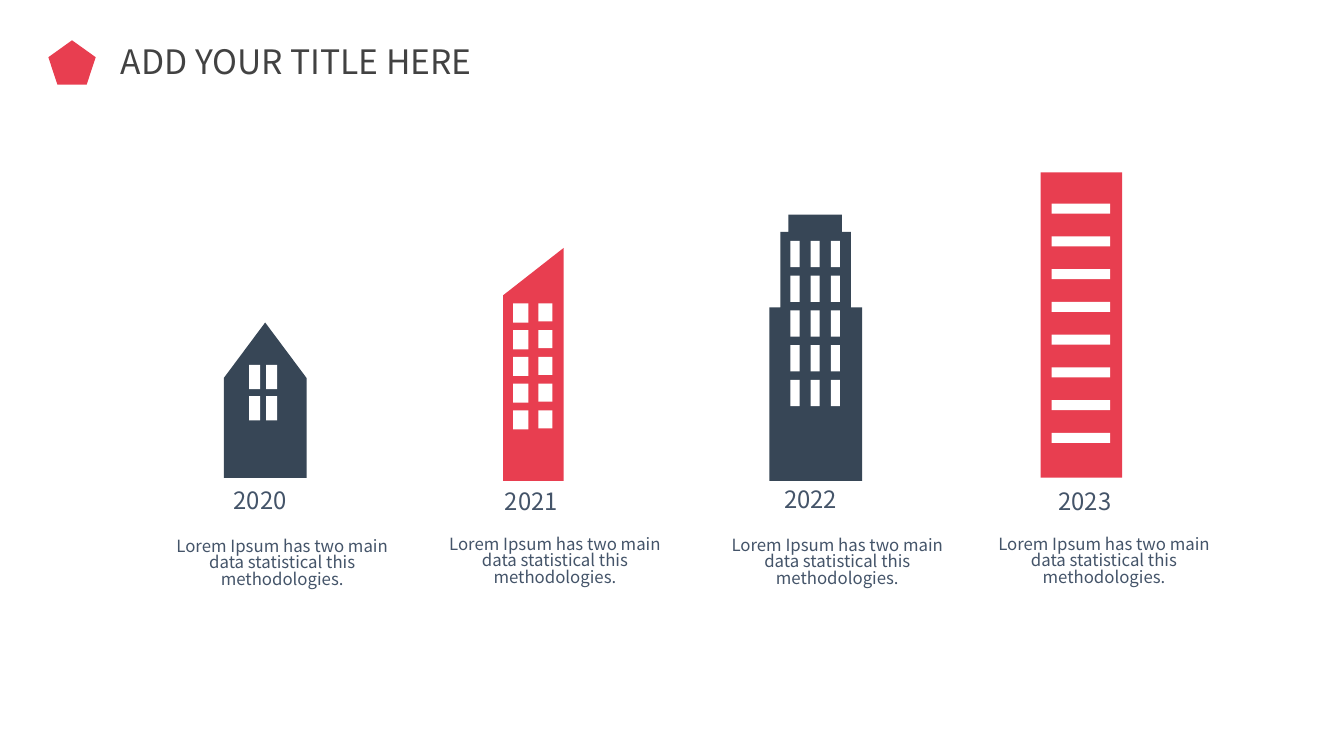
from pptx import Presentation
from pptx import util as u
from pptx.dml.color import RGBColor
from pptx.enum import shapes, text

HUES = {"red": "E83E50", "navy": "374656", "white": "FFFFFF",
        "title": "424242", "body": "445469"}
BLURB = "Lorem Ipsum has two main data statistical this methodologies."


class Page:
    font = "Noto Sans CJK JP"

    def __init__(self, slide):
        self.slide = slide

    def hue(self, name):
        return RGBColor.from_string(HUES[name])

    def paint(self, item, fill):
        item.shadow.inherit = False
        item.fill.solid()
        item.fill.fore_color.rgb = self.hue(fill)
        item.line.fill.background()

    def shape(self, box, fill, kind=shapes.MSO_SHAPE.RECTANGLE):
        item = self.slide.shapes.add_shape(kind, *map(u.Inches, box))
        self.paint(item, fill)

    def outline(self, points, fill):
        start, *rest = [(u.Inches(x), u.Inches(y)) for x, y in points]
        form = self.slide.shapes.build_freeform(*start)
        form.add_line_segments(rest, close=True)
        self.paint(form.convert_to_shape(), fill)

    def panes(self, lefts, top, step, rows, width, height):
        """Draw a grid of white windows."""
        for row in range(rows):
            for left in lefts:
                self.shape((left, top + row * step, width, height), "white")

    def label(self, box, words, size, hue="body", space=0.9, align=text.PP_ALIGN.LEFT):
        frame = self.slide.shapes.add_textbox(*map(u.Inches, box)).text_frame
        frame.word_wrap = True
        frame.auto_size = text.MSO_AUTO_SIZE.SHAPE_TO_FIT_TEXT
        para = frame.paragraphs[0]
        para.text = words
        para.alignment = align
        para.line_spacing = space
        para.font.name = self.font
        para.font.size = u.Pt(size)
        para.font.color.rgb = self.hue(hue)


def main():
    deck = Presentation()
    deck.slide_width, deck.slide_height = u.Inches(13.33), u.Inches(7.5)
    page = Page(deck.slides.add_slide(deck.slide_layouts[6]))

    page.shape((0.48, 0.4, 0.47, 0.44), "red", shapes.MSO_SHAPE.REGULAR_PENTAGON)
    page.label((1.1, 0.4, 4.95, 0.5), "ADD YOUR TITLE HERE", 24, "title")

    # House
    page.outline([(3.04, 4.74), (2.22, 4.74), (2.22, 3.75), (2.63, 3.2),
                  (3.04, 3.75)], "navy")
    page.panes([2.47, 2.64], 3.62, 0.31, 2, 0.11, 0.24)

    # Slanted block
    page.outline([(5.59, 2.46), (4.99, 2.93), (4.99, 4.77), (5.59, 4.77)], "red")
    page.panes([5.09], 3.01, 0.265, 5, 0.15, 0.19)
    page.panes([5.34], 3.01, 0.265, 5, 0.14, 0.18)

    # Stepped tower
    page.outline([(8.44, 3.05), (8.44, 2.3), (8.35, 2.3), (8.35, 2.13),
                  (7.82, 2.13), (7.82, 2.3), (7.74, 2.3), (7.74, 3.05),
                  (7.63, 3.05), (7.63, 4.77), (8.55, 4.77), (8.55, 3.05)], "navy")
    page.panes([7.84, 8.04, 8.24], 2.39, 0.345, 5, 0.09, 0.26)

    # Flat tower
    page.shape((10.32, 1.71, 0.81, 3.03), "red")
    page.panes([10.43], 2.02, 0.325, 8, 0.58, 0.1)

    # Year left and top, then text left, top and width
    spots = [(2.22, 4.8, 1.55, 5.3, 2.5), (4.91, 4.81, 4.24, 5.28, 2.53),
             (7.68, 4.79, 7.05, 5.29, 2.51), (10.4, 4.81, 9.69, 5.28, 2.52)]
    for year, (x, y, left, top, width) in enumerate(spots, 2020):
        page.label((x, y, 0.93, 0.39), str(year), 17)
        page.label((left, top, width, 0.71), BLURB, 12, space=0.82,
                   align=text.PP_ALIGN.CENTER)

    deck.save("out.pptx")


if __name__ == "__main__":
    main()
